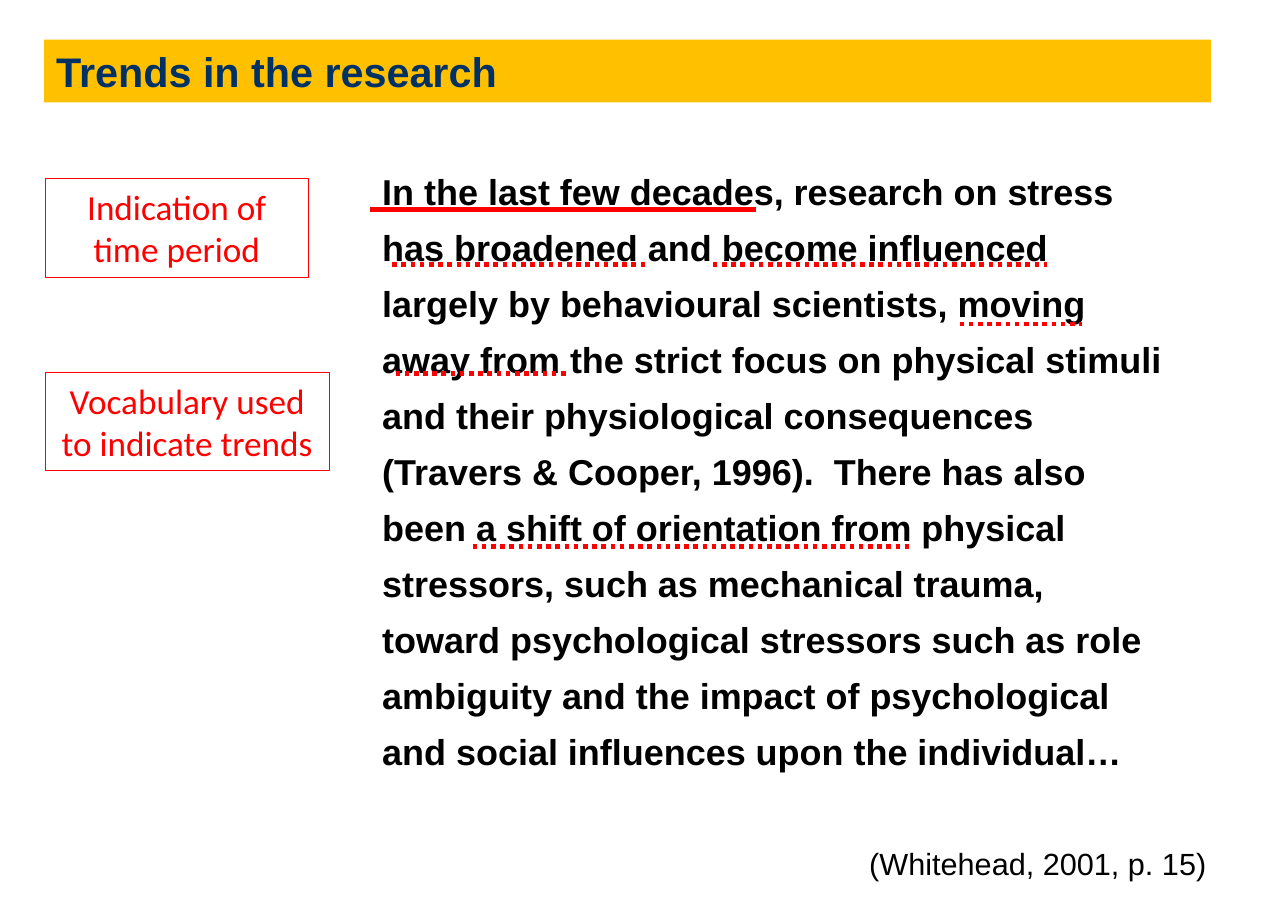
from pptx import Presentation
from pptx.dml.color import RGBColor
from pptx.enum.dml import MSO_LINE
from pptx.enum.shapes import MSO_CONNECTOR, MSO_SHAPE
from pptx.enum.text import MSO_ANCHOR, MSO_AUTO_SIZE, PP_ALIGN
from pptx.oxml.ns import qn
from pptx.util import Pt
from lxml.etree import SubElement

PX = 9144
COLORS = {"band": "FFC000", "title": "003164", "text": "000000", "mark": "FF0000"}
PASSAGE = (
    "In the last few decades, research on stress has broadened and become "
    "influenced largely by behavioural scientists, moving away from the strict "
    "focus on physical stimuli and their physiological consequences "
    "(Travers & Cooper, 1996).  There has also been a shift of orientation from "
    "physical stressors, such as mechanical trauma, toward psychological "
    "stressors such as role ambiguity and the impact of psychological and "
    "social influences upon the individual…"
)
TREND_MARKS = [(20, 104, 230), (311, 104, 303), (535, 158, 111),
               (23, 203, 156), (93, 360, 396)]


def emu(*lengths):
    """Turn px lengths into EMU."""
    return [n * PX for n in lengths]


def color(name):
    """Look up a named colour."""
    return RGBColor.from_string(COLORS[name])


def write(shape, text, size, fill="text", font="Arial", bold=False,
          align=PP_ALIGN.LEFT, spacing=1.0):
    """Put one formatted paragraph in a shape."""
    tf = shape.text_frame
    tf.word_wrap = True
    tf.auto_size = MSO_AUTO_SIZE.NONE
    tf.vertical_anchor = MSO_ANCHOR.TOP
    tf.margin_left, tf.margin_top, tf.margin_right, tf.margin_bottom = emu(11, 6, 11, 6)
    p = tf.paragraphs[0]
    p.alignment, p.line_spacing, p.space_before = align, spacing, Pt(0)
    r = p.add_run()
    r.text = text
    r.font.name, r.font.size, r.font.bold = font, Pt(size), bold
    r.font.color.rgb = color(fill)


def add_title(s, x, y, w, h):
    """Place the title on its coloured band."""
    sp = s.shapes.title
    sp.left, sp.top, sp.width, sp.height = emu(x, y, w, h)
    sp.fill.solid()
    sp.fill.fore_color.rgb = color("band")
    write(sp, "Trends in the research", 27, "title", bold=True)


def add_label(s, text, x, y, w, h):
    """Add an outlined label."""
    sp = s.shapes.add_shape(MSO_SHAPE.RECTANGLE, *emu(x, y, w, h))
    sp.shadow.inherit = False
    sp.fill.background()
    sp.line.color.rgb = color("mark")
    sp.line.width = Pt(0.75)
    write(sp, text, 23, "mark", "Calibri", align=PP_ALIGN.CENTER)


def add_underline(s, x, y, w, dash=None):
    """Add a horizontal mark below some words."""
    line = s.shapes.add_connector(MSO_CONNECTOR.STRAIGHT, *emu(x, y, x + w, y))
    line.line.color.rgb = color("mark")
    line.line.width = Pt(3)
    line.line.dash_style = dash
    SubElement(line._element.spPr, qn("a:effectLst"))


def add_passage(s, x, y, w, h):
    """Add the quoted passage and its underlines."""
    write(s.shapes.add_textbox(*emu(x, y, w, h)), PASSAGE, 23.5, bold=True, spacing=1.3)
    add_underline(s, x, y + 54, 350)
    for dx, dy, length in TREND_MARKS:
        add_underline(s, x + dx, y + dy, length, MSO_LINE.ROUND_DOT)


def add_citation(s, x, y, w, h):
    """Add the source of the passage."""
    write(s.shapes.add_textbox(*emu(x, y, w, h)), "(Whitehead, 2001, p. 15)", 20)


def main():
    """Build and save the slide."""
    prs = Presentation()
    prs.slide_width, prs.slide_height = emu(1169, 827)
    s = prs.slides.add_slide(prs.slide_layouts[5])
    add_title(s, 40, 36, 1059, 57)
    add_passage(s, 336, 136, 736, 577)
    add_label(s, "Indication of time period", 41, 162, 239, 90)
    add_label(s, "Vocabulary used to indicate trends", 41, 338, 258, 89)
    add_citation(s, 778, 761, 350, 45)
    prs.save("out.pptx")


if __name__ == "__main__":
    main()
